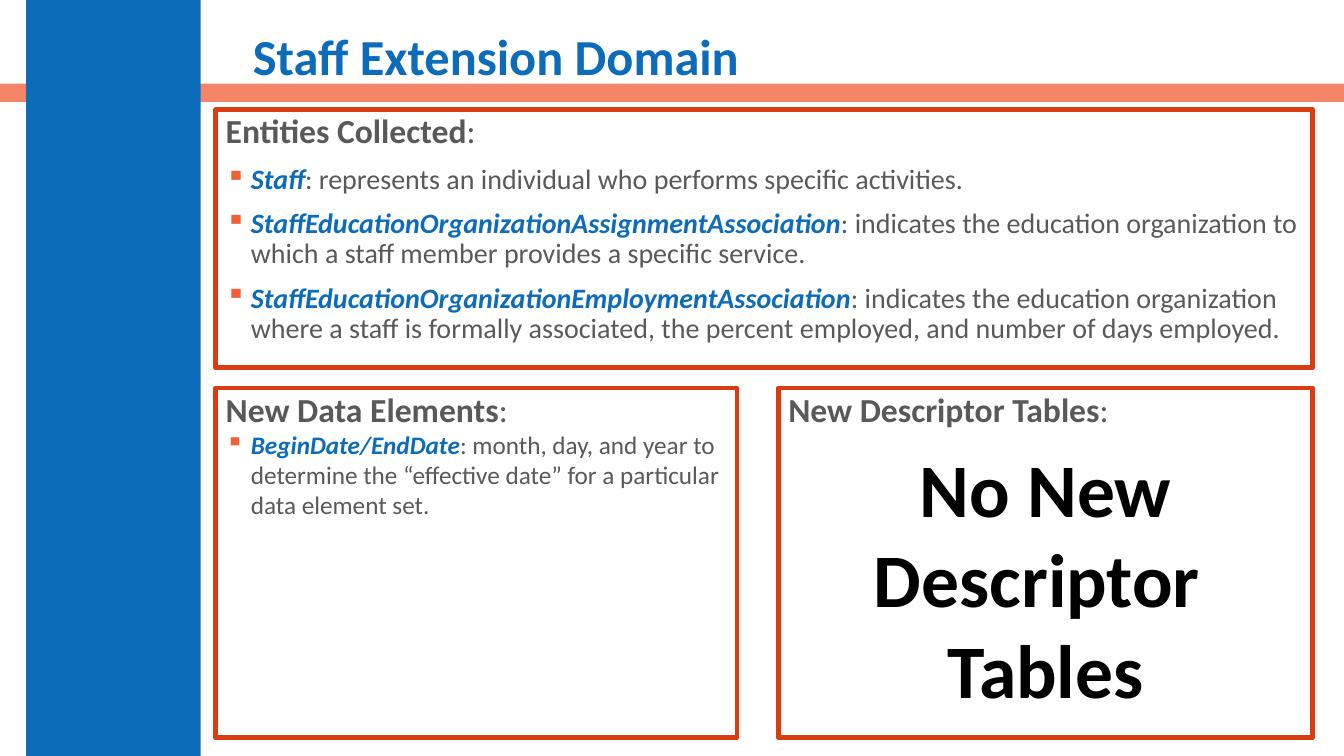
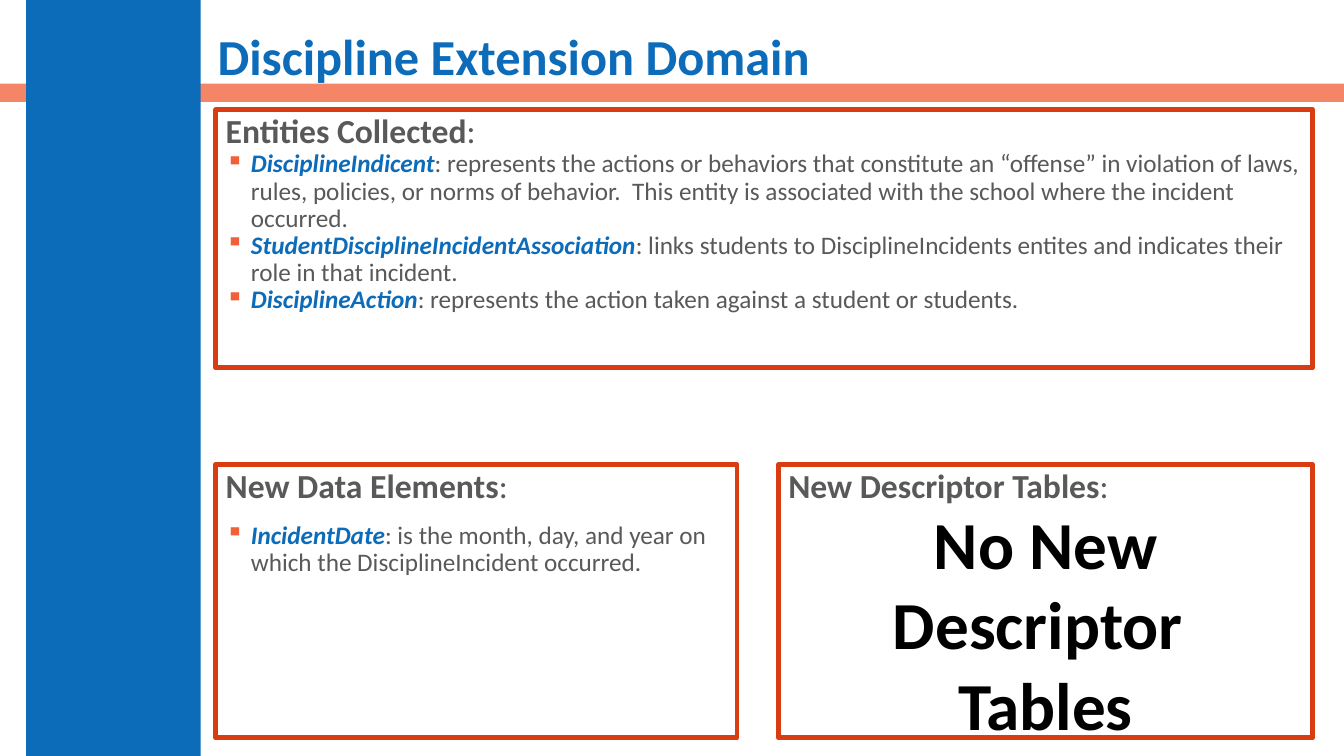
"""Build two slides that describe extension domains."""
from dataclasses import dataclass

import lxml.etree
import pptx
import pptx.dml.color
import pptx.enum.shapes
import pptx.enum.text
import pptx.oxml.ns
import pptx.util

Inches = pptx.util.Inches
Pt = pptx.util.Pt
qn = pptx.oxml.ns.qn


@dataclass(frozen=True)
class Theme:
    """Colours, font and type sizes of the deck."""
    blue: str = "0D6CB9"
    orange: str = "F16038"
    border: str = "D93C10"
    grey: str = "595959"
    black: str = "000000"
    font: str = "Calibri"
    title: int = 36
    heading: int = 24
    border_width: float = 3.5
    band_alpha: int = 76


@dataclass(frozen=True)
class Box:
    """A rectangle in inches."""
    left: float
    top: float
    width: float
    height: float

    def emu(self):
        """Return the rectangle as lengths."""
        return [Inches(n) for n in (self.left, self.top, self.width, self.height)]


@dataclass(frozen=True)
class Bullets:
    """Terms with meanings, and how their list is set."""
    entries: tuple
    size: int
    space_before: int = 0
    line_spacing: float = 0.9


@dataclass(frozen=True)
class Domain:
    """Content and varying measures of one slide."""
    title: str
    title_left: float
    entities: Bullets
    lower_top: float
    elements: Bullets
    notice_size: int
    notice_offset: float
    notice_width: float


THEME = Theme()
SLIDE = Box(0, 0, 13.33, 7.5)
CONTENT = Box(2.14, 1.09, 10.88, 6.23)
ENTITIES_HEIGHT = 2.56
ELEMENTS_WIDTH = 5.17
TABLES_WIDTH = 5.3
TITLE_RIGHT = 12.94
NOTICE = ("No New", "Descriptor ", "Tables")

DOMAINS = (
    Domain(
        "Staff Extension Domain", 2.41,
        Bullets((
            ("Staff", ": represents an individual who performs specific activities."),
            ("StaffEducationOrganizationAssignmentAssociation",
             ": indicates the education organization to which a staff member "
             "provides a specific service."),
            ("StaffEducationOrganizationEmploymentAssociation",
             ": indicates the education organization where a staff is formally "
             "associated, the percent employed, and number of days employed."),
        ), 20, space_before=10),
        3.85,
        Bullets((
            ("BeginDate/EndDate",
             ": month, day, and year to determine the “effective date” for a "
             "particular data element set."),
        ), 18, line_spacing=1.0),
        54, 0.48, 3.64),
    Domain(
        "Discipline Extension Domain", 2.06,
        Bullets((
            ("DisciplineIndicent",
             ": represents the actions or behaviors that constitute an “offense” "
             "in violation of laws, rules, policies, or norms of behavior.  This "
             "entity is associated with the school where the incident occurred."),
            ("StudentDisciplineIncidentAssociation",
             ": links students to DisciplineIncidents entites and indicates "
             "their role in that incident."),
            ("DisciplineAction",
             ": represents the action taken against a student or students."),
        ), 18),
        4.61,
        Bullets((
            ("IncidentDate",
             ": is the month, day, and year on which the DisciplineIncident occurred."),
        ), 18, space_before=12),
        48, 0.32, 3.26),
)


def rgb(colour):
    """Turn a hex string into a colour."""
    return pptx.dml.color.RGBColor.from_string(colour)


def add_run(paragraph, text, size, colour, bold=False, italic=False):
    """Append one formatted run to a paragraph."""
    run = paragraph.add_run()
    run.text = text
    run.font.name = THEME.font
    run.font.size = Pt(size)
    run.font.color.rgb = rgb(colour)
    run.font.bold = bold
    run.font.italic = italic


def add_rectangle(slide, box):
    """Add a plain rectangle without a shadow."""
    rectangle = slide.shapes.add_shape(
        pptx.enum.shapes.MSO_SHAPE.RECTANGLE, *box.emu())
    rectangle.shadow.inherit = False
    return rectangle


def add_band(slide, box, colour, alpha=100):
    """Add a filled band, see-through when alpha is below 100."""
    band = add_rectangle(slide, box)
    band.fill.solid()
    band.fill.fore_color.rgb = rgb(colour)
    band.line.fill.background()
    if alpha < 100:
        tint = band.fill._xPr.find(qn("a:solidFill"))[0]
        lxml.etree.SubElement(tint, qn("a:alpha"), val=str(alpha * 1000))


def add_title(slide, box, text):
    """Add the slide title, centred vertically in its box."""
    frame = slide.shapes.add_textbox(*box.emu()).text_frame
    frame.word_wrap = True
    frame.vertical_anchor = pptx.enum.text.MSO_ANCHOR.MIDDLE
    heading = frame.paragraphs[0]
    heading.line_spacing = 0.9
    add_run(heading, text, THEME.title, THEME.blue, bold=True)


def set_bullet(paragraph):
    """Give a paragraph a hanging square bullet."""
    properties = paragraph._p.get_or_add_pPr()
    properties.set("marL", str(Inches(0.25)))
    properties.set("indent", str(-Inches(0.25)))
    tint = lxml.etree.SubElement(properties, qn("a:buClr"))
    lxml.etree.SubElement(tint, qn("a:srgbClr"), val=THEME.orange)
    lxml.etree.SubElement(properties, qn("a:buChar"), char="▪")


def add_panel(slide, box, heading, bullets=None):
    """Add a bordered panel with a heading and an optional bullet list."""
    panel = add_rectangle(slide, box)
    panel.fill.background()
    panel.line.color.rgb = rgb(THEME.border)
    panel.line.width = Pt(THEME.border_width)
    frame = panel.text_frame
    frame.word_wrap = True
    frame.vertical_anchor = pptx.enum.text.MSO_ANCHOR.TOP
    caption = frame.paragraphs[0]
    caption.alignment = pptx.enum.text.PP_ALIGN.LEFT
    caption.line_spacing = 0.9
    add_run(caption, heading, THEME.heading, THEME.grey, bold=True)
    add_run(caption, ":", THEME.heading, THEME.grey)
    for term, meaning in bullets.entries if bullets else ():
        entry = frame.add_paragraph()
        set_bullet(entry)
        entry.alignment = pptx.enum.text.PP_ALIGN.LEFT
        entry.line_spacing = bullets.line_spacing
        entry.space_before = Pt(bullets.space_before)
        add_run(entry, term, bullets.size, THEME.blue, bold=True, italic=True)
        add_run(entry, meaning, bullets.size, THEME.grey)


def add_notice(slide, panel, domain):
    """Add the large notice, centred across its panel."""
    left = panel.left + (panel.width - domain.notice_width) / 2
    height = len(NOTICE) * domain.notice_size * 1.21 / 72 + 0.1
    box = Box(left, panel.top + domain.notice_offset, domain.notice_width, height)
    frame = slide.shapes.add_textbox(*box.emu()).text_frame
    frame.word_wrap = False
    frame.auto_size = pptx.enum.text.MSO_AUTO_SIZE.SHAPE_TO_FIT_TEXT
    for index, words in enumerate(NOTICE):
        line = frame.add_paragraph() if index else frame.paragraphs[0]
        line.alignment = pptx.enum.text.PP_ALIGN.CENTER
        add_run(line, words, domain.notice_size, THEME.black, bold=True)


def add_backdrop(slide, box):
    """Add the bands that every slide shares."""
    add_band(slide, Box(box.left, box.top + 0.83, box.width, 0.18),
             THEME.orange, THEME.band_alpha)
    add_band(slide, Box(box.left + 0.26, box.top, 1.73, box.height), THEME.blue)


def add_domain(slide, box, domain):
    """Lay out the three panels of a domain in a box."""
    bottom = box.top + box.height
    lower_height = bottom - domain.lower_top
    elements = Box(box.left, domain.lower_top, ELEMENTS_WIDTH, lower_height)
    tables = Box(box.left + box.width - TABLES_WIDTH, domain.lower_top,
                 TABLES_WIDTH, lower_height)
    add_panel(slide, Box(box.left, box.top, box.width, ENTITIES_HEIGHT),
              "Entities Collected", domain.entities)
    add_panel(slide, elements, "New Data Elements", domain.elements)
    add_panel(slide, tables, "New Descriptor Tables")
    add_notice(slide, tables, domain)


def main():
    """Build and save the deck."""
    deck = pptx.Presentation()
    deck.slide_width = Inches(SLIDE.width)
    deck.slide_height = Inches(SLIDE.height)
    for domain in DOMAINS:
        slide = deck.slides.add_slide(deck.slide_layouts[6])
        add_backdrop(slide, SLIDE)
        title_width = TITLE_RIGHT - domain.title_left
        add_title(slide, Box(domain.title_left, 0.18, title_width, 0.82), domain.title)
        add_domain(slide, CONTENT, domain)
    deck.save("out.pptx")


if __name__ == "__main__":
    main()
